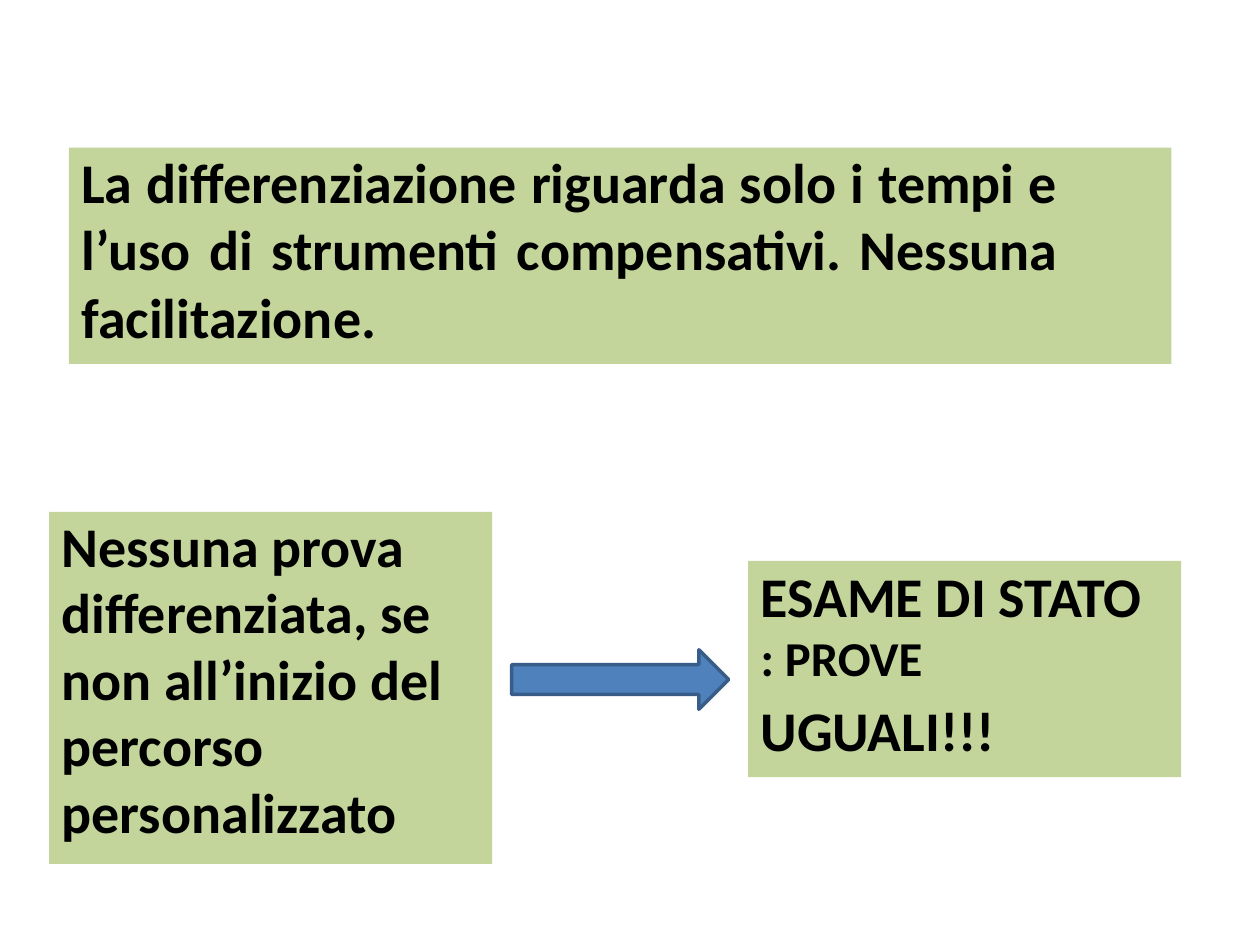
from dataclasses import dataclass

from pptx import Presentation
from pptx import util as u
from pptx.dml.color import RGBColor
from pptx.enum import shapes, text

GREEN = RGBColor(0xC3, 0xD5, 0x9B)
BLUE = RGBColor(0x4F, 0x81, 0xBC)
DARK_BLUE = RGBColor(0x38, 0x5D, 0x89)
BLACK = RGBColor(0, 0, 0)
INSET = 7.2


@dataclass
class Panel:
    """A filled box with bold text; lengths in points."""
    left: float
    top: float
    width: float
    height: float
    lines: tuple[str, ...]
    space_before: float
    line_spacing: float = 38.4
    right_inset: float = 0
    align: text.PP_ALIGN = text.PP_ALIGN.LEFT


def add_filled_shape(slide, kind, left, top, width, height, fill):
    shape = slide.shapes.add_shape(
        kind, u.Pt(left), u.Pt(top), u.Pt(width), u.Pt(height))
    shape.shadow.inherit = False
    shape.fill.solid()
    shape.fill.fore_color.rgb = fill
    shape.line.fill.background()
    return shape


def add_panel(slide, panel: Panel):
    box = add_filled_shape(slide, shapes.MSO_SHAPE.RECTANGLE, panel.left,
                           panel.top, panel.width, panel.height, GREEN)
    frame = box.text_frame
    frame.word_wrap = True
    frame.vertical_anchor = text.MSO_ANCHOR.TOP
    frame.margin_left = u.Pt(INSET)
    frame.margin_right = u.Pt(panel.right_inset)
    frame.margin_top = frame.margin_bottom = 0
    frame.text = "\n".join(panel.lines)
    frame.paragraphs[0].space_before = u.Pt(panel.space_before)
    for paragraph in frame.paragraphs:
        paragraph.alignment = panel.align
        paragraph.line_spacing = u.Pt(panel.line_spacing)
        font = paragraph.runs[0].font
        font.name, font.size, font.bold = "Calibri", u.Pt(32), True
        font.color.rgb = BLACK
    return box


def main():
    prs = Presentation()
    prs.slide_width, prs.slide_height = u.Pt(720), u.Pt(540)
    slide = prs.slides.add_slide(prs.slide_layouts[6])

    # Rule on differentiation
    add_panel(slide, Panel(
        39.4, 84.4, 630, 123.6,
        ("La differenziazione riguarda solo i tempi e l’uso di strumenti "
         "compensativi. Nessuna facilitazione.",),
        space_before=3, right_inset=64.5, align=text.PP_ALIGN.JUSTIFY))

    # No differentiated tests
    add_panel(slide, Panel(
        28.1, 292.5, 253.2, 201.2,
        ("Nessuna prova differenziata, se non all’inizio del percorso "
         "personalizzato",),
        space_before=2, line_spacing=38))

    # Arrow to the consequence
    arrow = add_filled_shape(slide, shapes.MSO_SHAPE.RIGHT_ARROW,
                             292.4, 371.3, 124, 34, BLUE)
    arrow.line.color.rgb = DARK_BLUE
    arrow.line.width = u.Pt(2)

    # State exam, with a slightly raised middle line
    exam = add_panel(slide, Panel(
        427.5, 320.6, 247.5, 123.6,
        ("ESAME DI STATO", ": PROVE", "UGUALI!!!"), space_before=3))
    prove = exam.text_frame.paragraphs[1].runs[0]
    prove.font.size = u.Pt(48)
    prove.font._element.set("baseline", "3000")

    prs.save("out.pptx")


if __name__ == "__main__":
    main()
